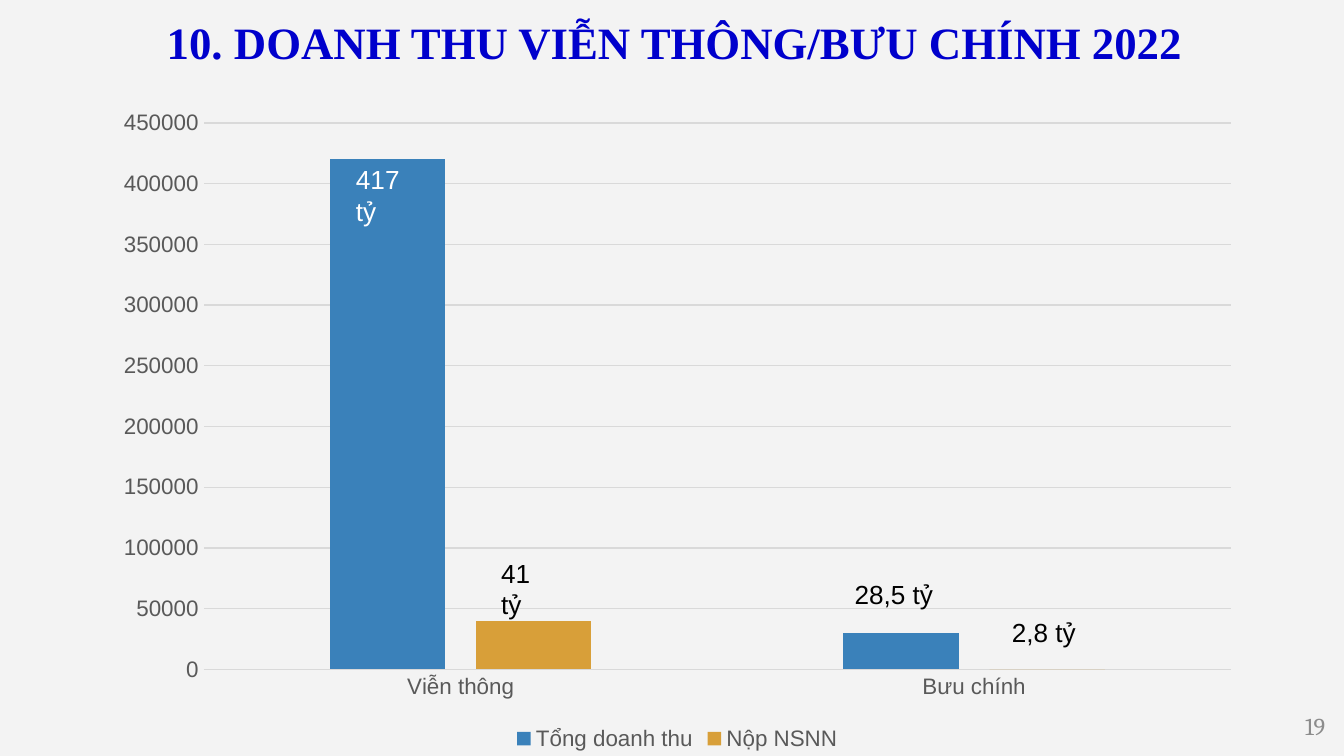
from pptx import Presentation
from pptx.chart.data import CategoryChartData
from pptx.dml.color import RGBColor
from pptx.enum.chart import XL_CHART_TYPE, XL_LEGEND_POSITION, XL_TICK_MARK
from pptx.enum.text import MSO_ANCHOR, MSO_AUTO_SIZE, PP_ALIGN
from pptx.util import Inches, Pt

BACKGROUND = RGBColor(0xF3, 0xF3, 0xF3)
TITLE_BLUE = RGBColor(0x00, 0x00, 0xCC)
BLUE = RGBColor(0x3A, 0x81, 0xBA)
GOLD = RGBColor(0xD8, 0x9F, 0x39)
GRID = RGBColor(0xD9, 0xD9, 0xD9)
AXIS_TEXT = RGBColor(0x59, 0x59, 0x59)
PAGE_GREY = RGBColor(0x8C, 0x8C, 0x8C)
BLACK = RGBColor(0x00, 0x00, 0x00)
WHITE = RGBColor(0xFF, 0xFF, 0xFF)

# Slide in 16:9
prs = Presentation()
prs.slide_width = Inches(10)
prs.slide_height = prs.slide_width * 9 // 16
s = prs.slides.add_slide(prs.slide_layouts[5])
s.background.fill.solid()
s.background.fill.fore_color.rgb = BACKGROUND


def share(x, y, w, h):
    """Turn percentages of the slide's size into lengths."""
    return [int(v * side / 100) for v, side in
            zip((x, y, w, h), (prs.slide_width, prs.slide_height) * 2)]


def put_text(text, box, sp=None, size=14, font="Arial", color=BLACK, bold=False,
             align=PP_ALIGN.LEFT, anchor=MSO_ANCHOR.TOP, inset=0.05):
    sp = sp or s.shapes.add_textbox(0, 0, 0, 0)
    sp.left, sp.top, sp.width, sp.height = share(*box)
    tf = sp.text_frame
    tf.word_wrap, tf.auto_size = True, MSO_AUTO_SIZE.NONE
    tf.vertical_anchor = anchor
    tf.margin_left = tf.margin_right = Inches(0.1)
    tf.margin_top = tf.margin_bottom = Inches(inset)
    p = tf.paragraphs[0]
    p.alignment = align
    r = p.add_run()
    r.text = text
    r.font.size, r.font.name, r.font.bold = Pt(size), font, bold
    r.font.color.rgb = color


# Title and page number
put_text("10. DOANH THU VIỄN THÔNG/BƯU CHÍNH 2022", (11.4, -0.36, 85, 11.2),
         sp=s.shapes.title, size=24, font="Times New Roman", color=TITLE_BLUE,
         bold=True, anchor=MSO_ANCHOR.BOTTOM, inset=0.1)
put_text("19", (93.6, 92.3, 6, 7.7), size=13, font="Cambria", color=PAGE_GREY,
         align=PP_ALIGN.RIGHT, inset=0.1)

# Column chart
data = CategoryChartData()
data.categories = ["Viễn thông", "Bưu chính"]
data.add_series("Tổng doanh thu", (420000, 30000))
data.add_series("Nộp NSNN", (40000, 0))
chart = s.shapes.add_chart(XL_CHART_TYPE.COLUMN_CLUSTERED,
                           *share(7.5, 12.95, 85.8, 87.05), data).chart
chart.has_title = False
chart.font.size, chart.font.name = Pt(10), "Arial"
chart.font.color.rgb = BLACK

plot = chart.plots[0]
plot.gap_width, plot.overlap, plot.vary_by_categories = 219, -27, False
for series, color in zip(plot.series, (BLUE, GOLD)):
    series.format.fill.solid()
    series.format.fill.fore_color.rgb = color

# Axes and legend
cat_axis, val_axis = chart.category_axis, chart.value_axis
val_axis.minimum_scale, val_axis.maximum_scale = 0, 450000
val_axis.major_unit = 50000
val_axis.has_major_gridlines = True
val_axis.format.line.fill.background()
for axis in (cat_axis, val_axis):
    axis.major_tick_mark = axis.minor_tick_mark = XL_TICK_MARK.NONE
for line in (cat_axis.format.line, val_axis.major_gridlines.format.line):
    line.color.rgb, line.width = GRID, Pt(0.75)

chart.has_legend = True
chart.legend.position = XL_LEGEND_POSITION.BOTTOM
chart.legend.include_in_layout = False
for font in (cat_axis.tick_labels.font, val_axis.tick_labels.font, chart.legend.font):
    font.size, font.name = Pt(12), "Arial"
    font.color.rgb = AXIS_TEXT

# Amounts beside the columns
for text, box, color in (
    ("28,5 tỷ", (62.6, 75.6, 9.1, 6.2), BLACK),
    ("2,8 tỷ", (74.3, 80.6, 7.8, 6.2), BLACK),
    ("417 tỷ", (25.5, 20.8, 6.5, 5.7), WHITE),
    ("41 tỷ", (36.3, 72.8, 5.5, 5.7), BLACK),
):
    put_text(text, box, color=color)

prs.save("out.pptx")
